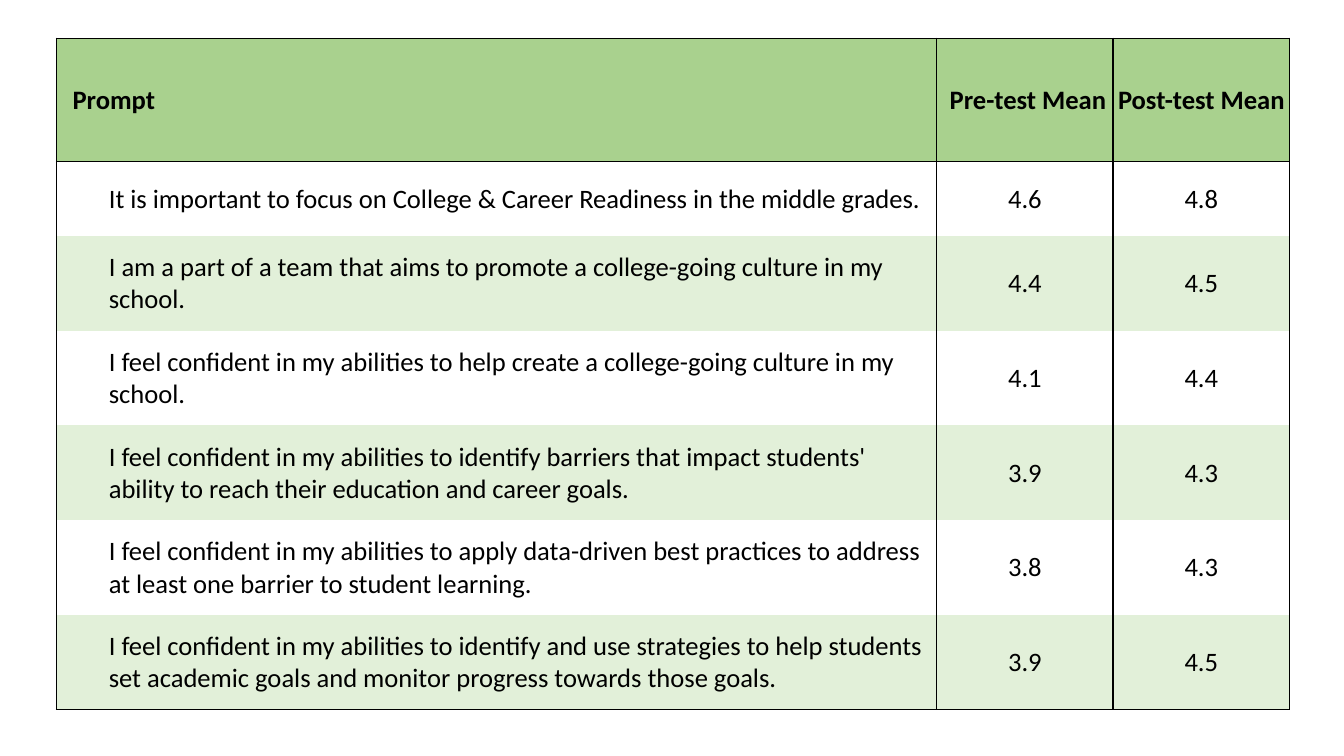
from dataclasses import dataclass

from lxml import etree
from pptx import Presentation
from pptx import util as u
from pptx.dml import color
from pptx.enum import text
from pptx.oxml import ns

COLORS = {"ink": "000000", "header": "A9D18E", "band": "E2F0D9"}
COLUMN_WIDTHS = (8.73, 1.75, 1.75)
HEADER_HEIGHT, FIRST_HEIGHT, PROMPT_HEIGHT = 1.22, 0.74, 0.94
CELL_FORMAT = {
    "margin_left": u.Inches(0.01),
    "margin_right": u.Inches(0.01),
    "margin_top": u.Inches(0.01),
    "margin_bottom": 0,
    "vertical_anchor": text.MSO_ANCHOR.MIDDLE,
}


@dataclass
class SurveyRow:
    """One table row with its text, look and ruled sides."""

    values: tuple[str, str, str]
    indents: tuple[float, float, float] = (0.51, 0, 0)
    height: float = PROMPT_HEIGHT
    fill: str | None = None
    bold: bool = False
    sides: str = "LR"


HEADER = SurveyRow(
    ("Prompt", "Pre-test Mean", "Post-test Mean"),
    (0.15, 0.06, 0), HEADER_HEIGHT, "header", True, "LRTB",
)
RESULTS = [
    ("It is important to focus on College & Career Readiness in the middle grades.", "4.6", "4.8"),
    ("I am a part of a team that aims to promote a college-going culture in my school.", "4.4", "4.5"),
    ("I feel confident in my abilities to help create a college-going culture in my school.", "4.1", "4.4"),
    ("I feel confident in my abilities to identify barriers that impact students' "
     "ability to reach their education and career goals.", "3.9", "4.3"),
    ("I feel confident in my abilities to apply data-driven best practices to address "
     "at least one barrier to student learning.", "3.8", "4.3"),
    ("I feel confident in my abilities to identify and use strategies to help students "
     "set academic goals and monitor progress towards those goals.", "3.9", "4.5"),
]


def survey_rows() -> list[SurveyRow]:
    """Return the header and the banded result rows."""
    rows = [HEADER]
    for index, values in enumerate(RESULTS):
        rows.append(SurveyRow(values, fill="band" if index % 2 else None))
    rows[1].height = FIRST_HEIGHT
    rows[1].sides = "LRT"
    rows[-1].sides = "LRB"
    return rows


def rule_cell(cell, sides: str) -> None:
    """Draw the given sides of a cell and clear the others."""
    properties = cell._tc.get_or_add_tcPr()
    for side in "LRTB":
        line = etree.SubElement(properties, ns.qn(f"a:ln{side}"), w=str(u.Pt(1)))
        if side in sides:
            solid = etree.SubElement(line, ns.qn("a:solidFill"))
            etree.SubElement(solid, ns.qn("a:srgbClr"), val=COLORS["ink"])
        else:
            etree.SubElement(line, ns.qn("a:noFill"))


def fill_cell(cell, row: SurveyRow, column: int) -> None:
    """Write and format one cell of a survey row."""
    for name, value in CELL_FORMAT.items():
        setattr(cell, name, value)
    rule_cell(cell, row.sides)
    if row.fill:
        cell.fill.solid()
        cell.fill.fore_color.rgb = color.RGBColor.from_string(COLORS[row.fill])
    else:
        cell.fill.background()
    para = cell.text_frame.paragraphs[0]
    para.alignment = text.PP_ALIGN.CENTER if column else text.PP_ALIGN.LEFT
    para._p.get_or_add_pPr().set("marL", str(u.Inches(row.indents[column])))
    span = para.add_run()
    span.text = row.values[column]
    for name, value in {"name": "Calibri", "size": u.Pt(19), "bold": row.bold}.items():
        setattr(span.font, name, value)
    span.font.color.rgb = color.RGBColor.from_string(COLORS["ink"])


def add_survey_table(page, rows: list[SurveyRow]) -> None:
    """Add the survey table to the page."""
    frame = page.shapes.add_table(
        len(rows), len(COLUMN_WIDTHS), u.Inches(0.56), u.Inches(0.38),
        u.Inches(sum(COLUMN_WIDTHS)), u.Inches(sum(row.height for row in rows)),
    )
    table = frame.table
    for name in ("first_row", "horz_banding"):
        setattr(table, name, False)
    for column, width in zip(table.columns, COLUMN_WIDTHS):
        column.width = u.Inches(width)
    for index, row in enumerate(rows):
        table.rows[index].height = u.Inches(row.height)
        for column in range(len(COLUMN_WIDTHS)):
            fill_cell(table.cell(index, column), row, column)


def main() -> None:
    """Build the survey slide and save it."""
    deck = Presentation()
    deck.slide_width, deck.slide_height = u.Inches(13.33), u.Inches(7.5)
    page = deck.slides.add_slide(deck.slide_layouts[6])
    add_survey_table(page, survey_rows())
    deck.save("out.pptx")


if __name__ == "__main__":
    main()
